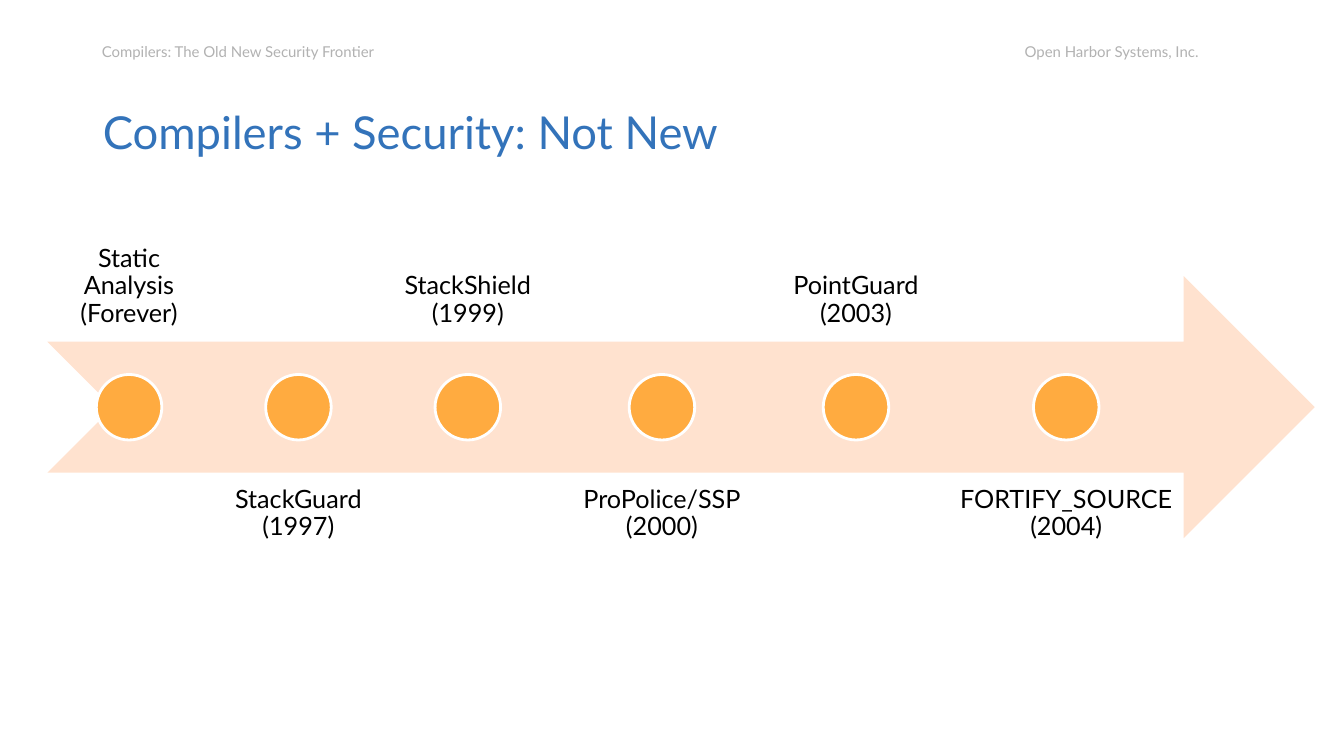
"""Build a timeline slide on the history of compiler security."""
from pptx import Presentation
from pptx.dml.color import RGBColor
from pptx.enum.shapes import MSO_SHAPE
from pptx.enum.text import MSO_ANCHOR, PP_ALIGN
from pptx.util import Inches, Pt

ARROW, DOT = MSO_SHAPE.NOTCHED_RIGHT_ARROW, MSO_SHAPE.OVAL
TOP, MID, LOW = MSO_ANCHOR.TOP, MSO_ANCHOR.MIDDLE, MSO_ANCHOR.BOTTOM
LEFT, MIDDLE, RIGHT = PP_ALIGN.LEFT, PP_ALIGN.CENTER, PP_ALIGN.RIGHT
BLUE = RGBColor(0x33, 0x73, 0xBA)
GREY = RGBColor(0xB2, 0xB2, 0xB2)
PEACH = RGBColor(0xFF, 0xE2, 0xCF)
ORANGE = RGBColor(0xFF, 0xAB, 0x40)
BLACK = RGBColor(0, 0, 0)
WHITE = RGBColor(0xFF, 0xFF, 0xFF)

TITLE = "Compilers + Security: Not New"
HEADS = [
    ("Compilers: The Old New Security Frontier", 0.88, 3, LEFT),
    ("Open Harbor Systems, Inc.", 9.73, 2.29, RIGHT),
]
EVENTS = [
    ("Static Analysis", "(Forever)", 1.6),
    ("StackGuard", "(1997)", 1.6),
    ("StackShield", "(1999)", 1.6),
    ("ProPolice/SSP", "(2000)", 2.09),
    ("PointGuard", "(2003)", 1.6),
    ("FORTIFY_SOURCE", "(2004)", 2.41),
]
START, GAP, HIGH = 0.48, 0.08, 2.6
ABOVE, BELOW = 0.79, 4.69
SIZE, AXIS = 0.65, 4.04


def place(box):
    """Convert a box in inches to lengths."""
    return [Inches(n) for n in box]


def style(para, size, color, align, space):
    """Format one paragraph."""
    para.alignment, para.line_spacing = align, space
    look = {"name": "Lato", "size": Pt(size), "bold": False}
    for key, value in look.items():
        setattr(para.font, key, value)
    para.font.color.rgb = color


def label(slide, lines, box, inset, anchor, *form):
    """Add a text box whose lines share one paragraph."""
    frame = slide.shapes.add_textbox(*place(box)).text_frame
    pad = Inches(inset)
    look = {"word_wrap": True, "vertical_anchor": anchor,
            "margin_left": pad, "margin_right": pad,
            "margin_top": pad, "margin_bottom": pad}
    for key, value in look.items():
        setattr(frame, key, value)
    para = frame.paragraphs[0]
    for i, line in enumerate(lines):
        if i:
            para.add_line_break()
        para.add_run().text = line
    style(para, *form)


def draw(slide, kind, box, fill):
    """Add a filled shape without shadow or outline."""
    shape = slide.shapes.add_shape(kind, *place(box))
    shape.shadow.inherit = False
    shape.fill.solid()
    shape.fill.fore_color.rgb = fill
    shape.line.fill.background()
    return shape


def main():
    """Lay out the slide and save it."""
    deck = Presentation()
    deck.slide_width, deck.slide_height = Inches(13.33), Inches(7.5)
    slide = deck.slides.add_slide(deck.slide_layouts[5])

    for text, x, wide, align in HEADS:
        label(slide, [text], (x, 0.26, wide, 0.48), 0.13, MID,
              10.7, GREY, align, 1.15)

    title = slide.shapes.title
    title.left, title.top, title.width, title.height = place(
        (0.92, 1.06, 11.5, 0.48))
    title.text_frame.text = TITLE
    title.text_frame.vertical_anchor = MID
    style(title.text_frame.paragraphs[0], 32.4, BLUE, LEFT, 1.0)

    draw(slide, ARROW, (0.47, 2.74, 12.57, HIGH), PEACH)
    x = START
    for i, (name, year, wide) in enumerate(EVENTS):
        y, anchor = (BELOW, TOP) if i % 2 else (ABOVE, LOW)
        label(slide, [name, year], (x, y, wide, HIGH), 0.14, anchor,
              18, BLACK, MIDDLE, 0.9)
        dot = draw(slide, DOT, (x + (wide - SIZE) / 2, AXIS - SIZE / 2,
                                SIZE, SIZE), ORANGE)
        dot.line.color.rgb = WHITE
        dot.line.width = Pt(2)
        x += wide + GAP

    deck.save("out.pptx")


if __name__ == "__main__":
    main()
